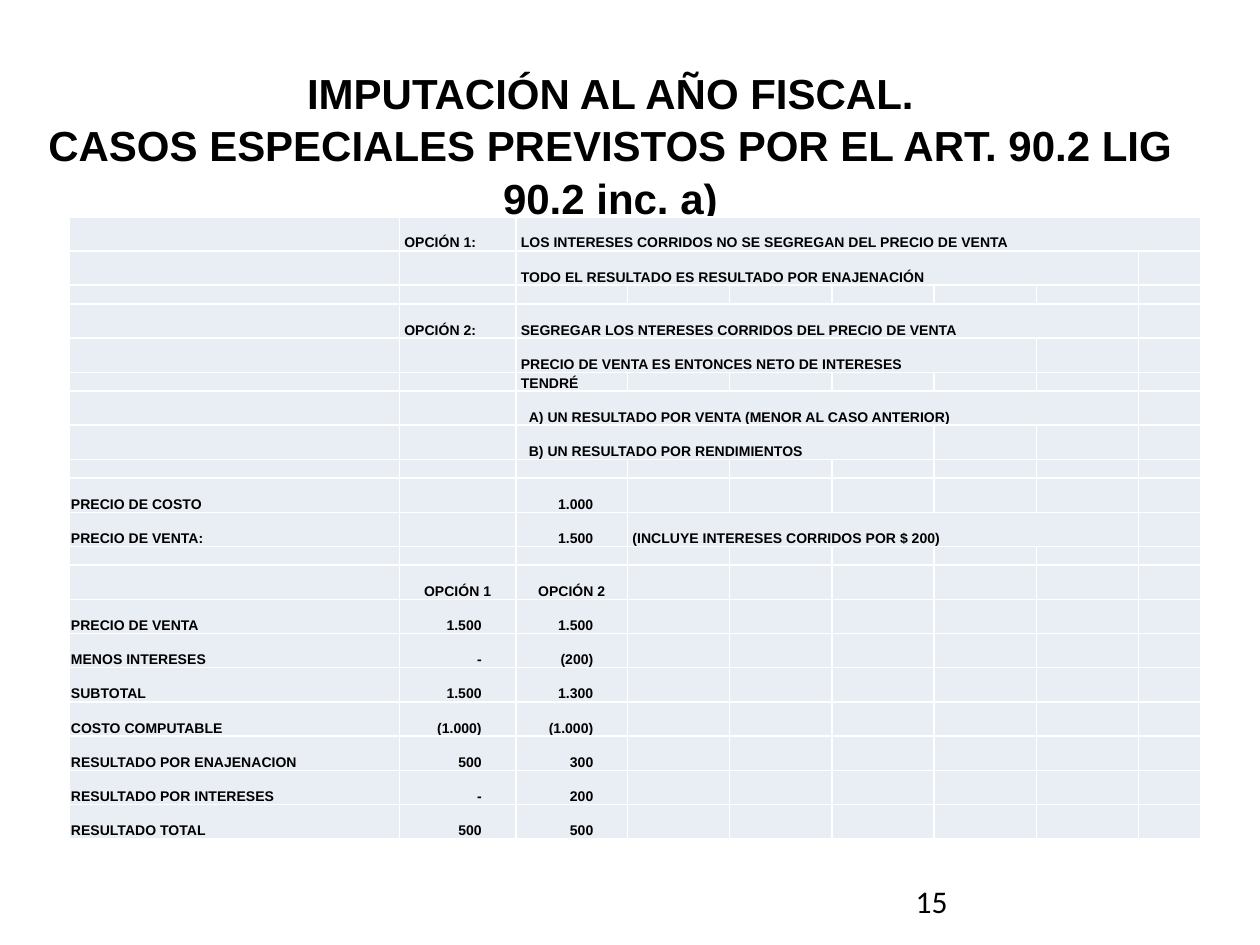
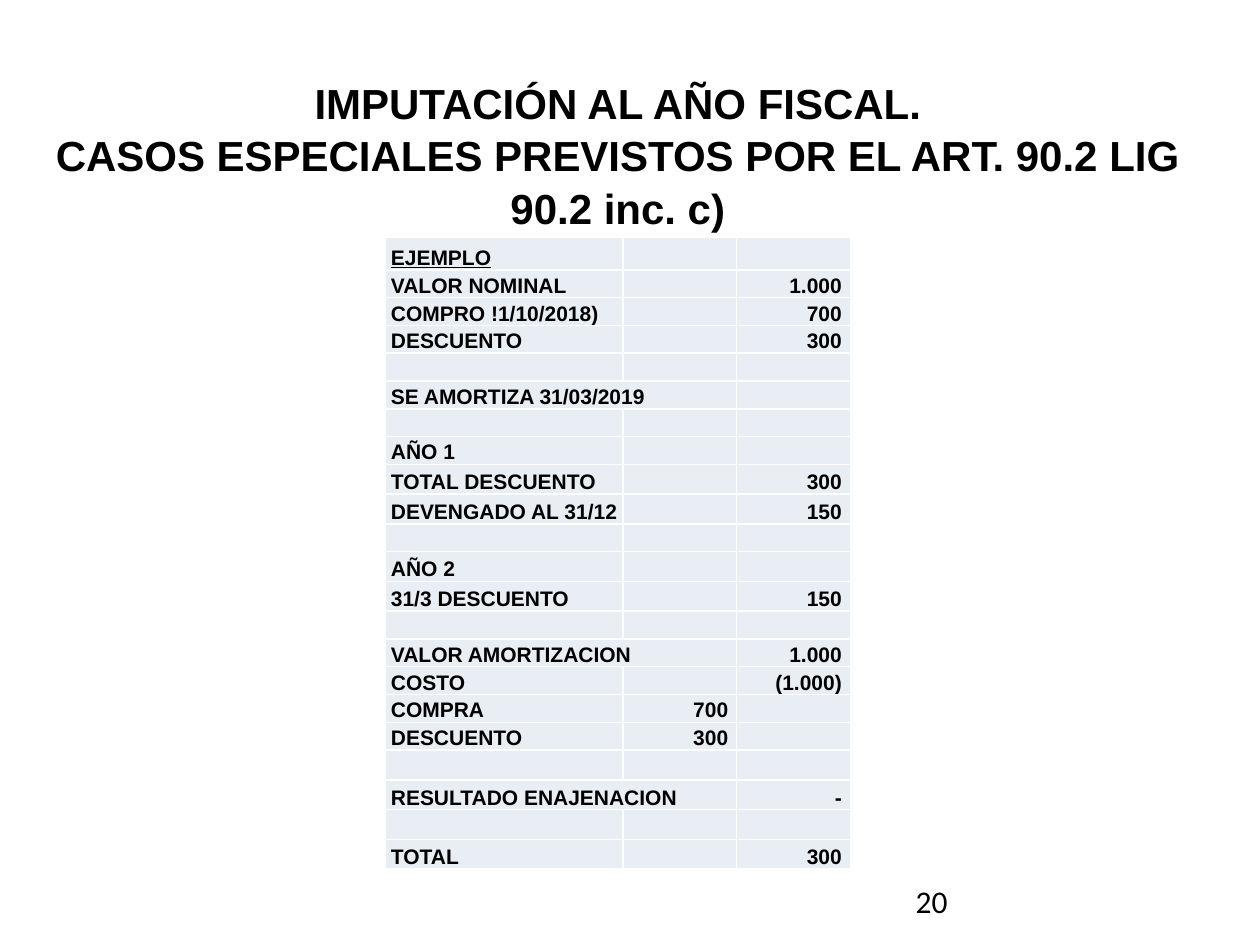
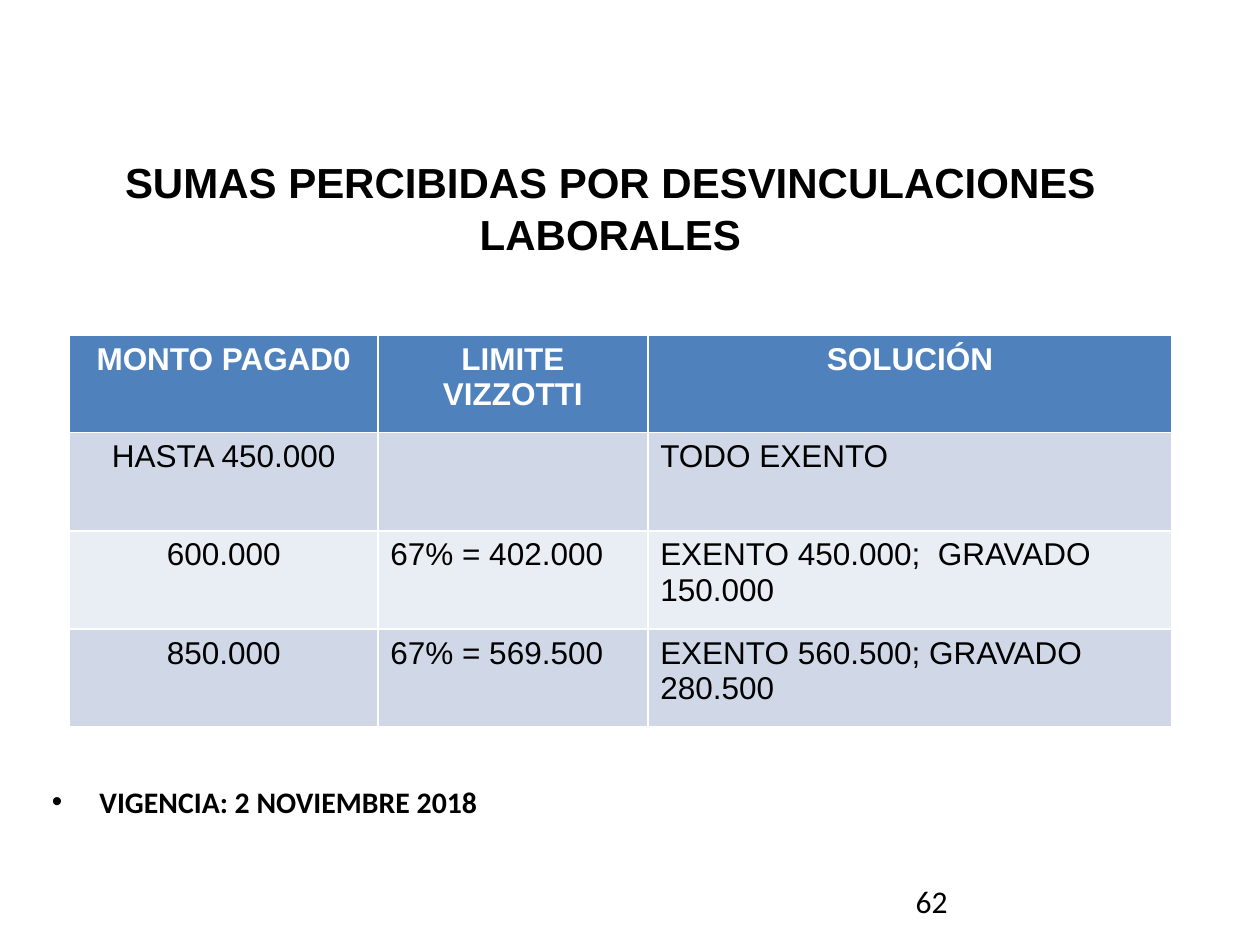
from dataclasses import dataclass
from typing import Any, NamedTuple, Optional

from lxml.etree import SubElement
from pptx import Presentation
from pptx.dml.color import RGBColor as Rgb
from pptx.enum.text import MSO_ANCHOR as Anchor
from pptx.enum.text import MSO_AUTO_SIZE as Fit
from pptx.enum.text import PP_ALIGN as Align
from pptx.oxml.ns import qn
from pptx.util import Cm, Pt

HUES = {
    "ink": "000000",
    "white": "FFFFFF",
    "head": "4F81BD",
    "band": "D0D8E8",
    "pale": "E9EDF4",
}
TITLE = {"name": "Arial", "size": Pt(24), "bold": True}
NOTE = {"name": "Calibri", "size": Pt(17), "bold": True}
PAGE = {"name": "Calibri", "size": Pt(18)}
TOPIC = "IMPUTACIÓN AL AÑO FISCAL.\vCASOS ESPECIALES PREVISTOS POR EL ART. 90.2 LIG\v"


class Box(NamedTuple):
    left: float
    top: float
    width: float
    height: float


class Item(NamedTuple):
    """A table cell: its text, columns covered, alignment and left inset."""
    text: str = ""
    span: int = 1
    align: Optional[Align] = None
    pad: Optional[float] = None


@dataclass
class Grid:
    """A table; rows may stop early, and cells under a span are skipped."""
    left: float
    top: float
    cols: list[float]
    highs: list[float]
    rows: list[list[Any]]
    size: int
    bold: bool = True
    head: bool = False
    fills: tuple[str, ...] = ("pale",)
    pad: float = 0.25
    first: float = 0.25
    end: float = 0.25
    edge: float = 0.13
    anchor: Anchor = Anchor.TOP


def mid(text: str) -> Item:
    return Item(text, align=Align.CENTER)


def apply(thing: Any, form: dict[str, Any]) -> None:
    for key, value in form.items():
        setattr(thing, key, value)


def place(shape: Any, box: Box) -> None:
    apply(shape, {key: Cm(value) for key, value in box._asdict().items()})


def paint(font: Any, form: dict[str, Any], hue: str = "ink") -> None:
    apply(font, form)
    font.color.rgb = Rgb.from_string(HUES[hue])


def is_num(text: str) -> bool:
    return not text.strip("()-.0123456789")


def fill_cell(cell: Any, item: Item, grid: Grid, row: int, col: int) -> None:
    pad = grid.first if col == 0 else grid.pad
    apply(cell, {
        "margin_left": Cm(pad if item.pad is None else item.pad),
        "margin_right": Cm(grid.end if is_num(item.text) else min(grid.end, grid.pad)),
        "margin_top": Cm(grid.edge),
        "margin_bottom": Cm(0 if grid.anchor == Anchor.BOTTOM else grid.edge),
        "vertical_anchor": grid.anchor,
    })
    cell.fill.solid()
    cell.fill.fore_color.rgb = Rgb.from_string(HUES[grid.fills[row % len(grid.fills)]])
    para = cell.text_frame.paragraphs[0]
    if not item.text:
        # the end mark keeps an empty row as low as its text size allows
        SubElement(para._p, qn("a:endParaRPr"), sz=str(grid.size * 100))
        return
    para.alignment = item.align or (Align.RIGHT if is_num(item.text) else Align.LEFT)
    run = para.add_run()
    run.text = item.text
    top = grid.head and row == 0
    form = {"name": "Arial", "size": Pt(grid.size), "bold": grid.bold or top}
    paint(run.font, form, "white" if top else "ink")
    if item.text == "EJEMPLO":
        run.font.underline = True


def draw_grid(slide: Any, grid: Grid) -> None:
    frame = slide.shapes.add_table(
        len(grid.highs), len(grid.cols), Cm(grid.left), Cm(grid.top),
        Cm(sum(grid.cols)), Cm(sum(grid.highs)))
    table = frame.table
    apply(table, {"first_row": grid.head, "horz_banding": False})
    for col, width in zip(table.columns, grid.cols):
        col.width = Cm(width)
    for row, high in zip(table.rows, grid.highs):
        row.height = Cm(high)
    for r, line in enumerate(grid.rows):
        full = line + [""] * (len(grid.cols) - len(line))
        for c, entry in enumerate(full):
            item = entry if isinstance(entry, Item) else Item(entry)
            cell = table.cell(r, c)
            if item.span > 1:
                cell.merge(table.cell(r, c + item.span - 1))
            fill_cell(cell, item, grid, r, c)


def add_page(deck: Any, layout: int, title: str, box: Box, page: int, grid: Grid) -> Any:
    slide = deck.slides.add_slide(deck.slide_layouts[layout])
    head = slide.shapes.title
    place(head, box)
    head.text_frame.text = title
    apply(head.text_frame, {"auto_size": Fit.NONE, "word_wrap": True,
                            "vertical_anchor": Anchor.MIDDLE})
    para = head.text_frame.paragraphs[0]
    apply(para, {"alignment": Align.CENTER, "line_spacing": 1.04})
    for run in para.runs:
        paint(run.font, TITLE)
    draw_grid(slide, grid)
    mark = slide.shapes.add_textbox(Cm(18.21), Cm(17.65), Cm(5.92), Cm(1.02))
    mark.text_frame.word_wrap = True
    run = mark.text_frame.paragraphs[0].add_run()
    run.text = str(page)
    paint(run.font, PAGE)
    return slide


def add_note(slide: Any, text: str, box: Box) -> None:
    body = slide.placeholders[1]
    place(body, box)
    body.text_frame.text = text
    body.text_frame.auto_size = Fit.NONE
    para = body.text_frame.paragraphs[0]
    props = para._p.get_or_add_pPr()
    props.set("marL", str(Cm(0.96)))
    props.set("indent", str(Cm(-0.96)))
    para.space_before = Pt(0)
    paint(para.runs[0].font, NOTE)


OPTIONS = Grid(
    left=1.4, top=4.37, size=8, first=0.03, pad=0.1, end=0.69, edge=0.03,
    anchor=Anchor.BOTTOM,
    cols=[6.65, 2.35, 2.25] + [2.06] * 5 + [1.25],
    highs=[0.35 if row in (2, 5, 8, 11) else 0.69 for row in range(20)],
    rows=[
        ["", "OPCIÓN 1:",
         Item("LOS INTERESES CORRIDOS NO SE SEGREGAN DEL PRECIO DE VENTA", 7)],
        ["", "", Item("TODO EL RESULTADO ES RESULTADO POR ENAJENACIÓN", 6)],
        [],
        ["", "OPCIÓN 2:", Item("SEGREGAR LOS NTERESES CORRIDOS DEL PRECIO DE VENTA", 6)],
        ["", "", Item("PRECIO DE VENTA ES ENTONCES NETO DE INTERESES", 5)],
        ["", "", "TENDRÉ"],
        ["", "", Item("A) UN RESULTADO POR VENTA (MENOR AL CASO ANTERIOR)", 6, pad=0.26)],
        ["", "", Item("B) UN RESULTADO POR RENDIMIENTOS", 4, pad=0.26)],
        [],
        ["PRECIO DE COSTO", "", "1.000"],
        ["PRECIO DE VENTA:", "", "1.500",
         Item("(INCLUYE INTERESES CORRIDOS POR $ 200)", 5)],
        [],
        ["", mid("OPCIÓN 1"), mid("OPCIÓN 2")],
        ["PRECIO DE VENTA", "1.500", "1.500"],
        ["MENOS INTERESES", "-", "(200)"],
        ["SUBTOTAL", "1.500", "1.300"],
        ["COSTO COMPUTABLE", "(1.000)", "(1.000)"],
        ["RESULTADO POR ENAJENACION", "500", "300"],
        ["RESULTADO POR INTERESES", "-", "200"],
        ["RESULTADO TOTAL", "500", "500"],
    ],
)

SAMPLE = Grid(
    left=7.76, top=4.78, size=12, first=0.12, pad=0.03, end=0.17, edge=0.03,
    anchor=Anchor.BOTTOM,
    cols=[4.8, 2.29, 2.29],
    highs=[0.66] + [0.6 if row in (8, 9, 11, 12) or row > 17 else 0.56
                    for row in range(1, 22)],
    rows=[
        ["EJEMPLO"],
        ["VALOR NOMINAL", "", "1.000"],
        ["COMPRO !1/10/2018)", "", "700"],
        ["DESCUENTO", "", "300"],
        [],
        [Item("SE AMORTIZA 31/03/2019", 2)],
        [],
        ["AÑO 1"],
        ["TOTAL DESCUENTO", "", "300"],
        ["DEVENGADO AL 31/12", "", "150"],
        [],
        ["AÑO 2"],
        ["31/3 DESCUENTO", "", "150"],
        [],
        [Item("VALOR AMORTIZACION", 2), "", "1.000"],
        ["COSTO", "", "(1.000)"],
        ["COMPRA", "700"],
        ["DESCUENTO", "300"],
        [],
        [Item("RESULTADO ENAJENACION", 2), "", "-"],
        [],
        ["TOTAL", "", "300"],
    ],
)

LIMITS = Grid(
    left=1.4, top=6.76, size=18, bold=False, head=True,
    fills=("head", "band", "pale", "band"),
    cols=[6.22, 5.44, 10.57],
    highs=[1.96] + [1.98] * 3,
    rows=[
        [mid("MONTO PAGAD0"), mid("LIMITE VIZZOTTI"), mid("SOLUCIÓN")],
        [mid("HASTA 450.000"), "", "TODO EXENTO"],
        [mid("600.000"), "67% = 402.000", "EXENTO 450.000;  GRAVADO 150.000"],
        [mid("850.000"), "67% = 569.500", "EXENTO 560.500; GRAVADO 280.500"],
    ],
)


def main() -> None:
    deck = Presentation()
    apply(deck, {"slide_width": Cm(25.4), "slide_height": Cm(19.05)})
    add_page(deck, 5, TOPIC + "90.2 inc. a)", Box(0, 1.78, 24.61, 2.25), 15, OPTIONS)
    add_page(deck, 5, TOPIC + "90.2 inc. c)", Box(0.3, 1.98, 24.31, 2.25), 20, SAMPLE)
    last = add_page(deck, 1, "SUMAS PERCIBIDAS POR DESVINCULACIONES LABORALES",
                    Box(0, 2.97, 24.61, 2.39), 62, LIMITS)
    add_note(last, "VIGENCIA: 2 NOVIEMBRE 2018", Box(0.79, 15.67, 23.34, 1.35))
    deck.save("out.pptx")


if __name__ == "__main__":
    main()
